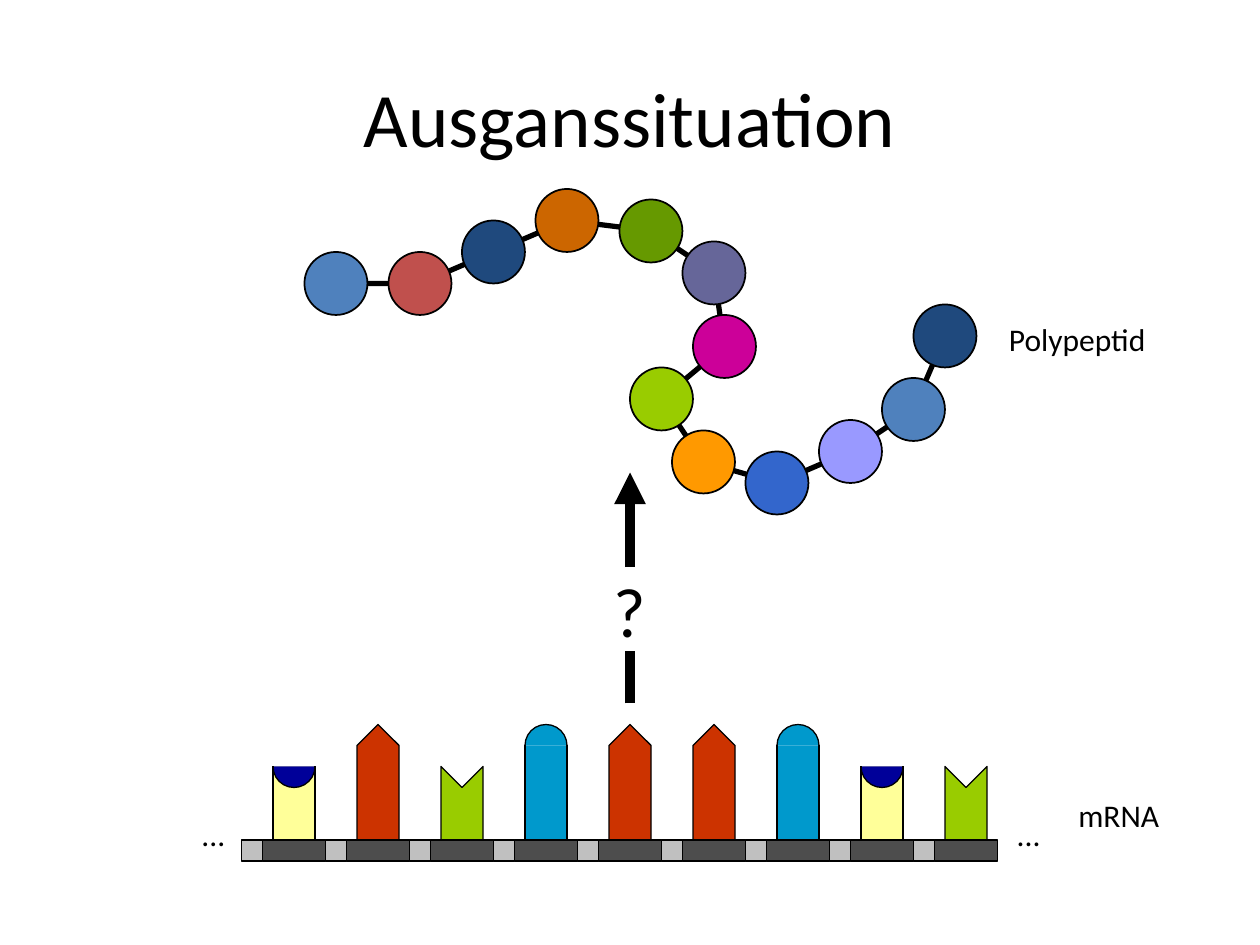
import pptx
import pptx.dml.color
import pptx.enum.shapes
import pptx.enum.text
import pptx.oxml
import pptx.oxml.ns
import pptx.util
from pptx.util import Inches

SHAPE = pptx.enum.shapes.MSO_SHAPE
STRAIGHT = pptx.enum.shapes.MSO_CONNECTOR.STRAIGHT
ALIGN = pptx.enum.text.PP_ALIGN
ANCHOR = pptx.enum.text.MSO_ANCHOR
COLORS = {
    "black": "000000", "blue": "4F81BD", "red": "C0504D", "navy": "1F497D",
    "brown": "CC6600", "green": "669900", "slate": "666699",
    "magenta": "CC0099", "lime": "99CC00", "orange": "FF9900",
    "royal": "3366CC", "lilac": "9999FF", "silver": "C0C0C0",
    "grey": "4D4D4D", "cyan": "0099CC", "yellow": "FFFF99",
    "ink": "000099", "brick": "CC3300",
}
COLORS = {name: pptx.dml.color.RGBColor.from_string(value)
          for name, value in COLORS.items()}


def at(*twelfths):
    """The drawing sits on a grid of twelfths of an inch."""
    return [Inches(n / 12) for n in twelfths]


def paint(shape, fill, width):
    shape.shadow.inherit = False
    if fill:
        shape.fill.solid()
        shape.fill.fore_color.rgb = COLORS[fill]
    else:
        shape.fill.background()
    if width:
        shape.line.color.rgb = COLORS["black"]
        shape.line.width = pptx.util.Pt(width)
    else:
        shape.line.fill.background()


deck = pptx.Presentation()
deck.slide_width, deck.slide_height = Inches(10), Inches(7.5)
slide = deck.slides.add_slide(deck.slide_layouts[6])
polypeptide, question, mrna = [
    slide.shapes.add_group_shape().shapes for _ in range(3)]

# Texts
texts = [
    (slide.shapes, "Ausganssituation", (0.5, 0.3, 9, 1.25), 44,
     {"vertical_anchor": ANCHOR.MIDDLE, "word_wrap": True}, ALIGN.CENTER),
    (question, "?", (4.75, 4.5, 0.5, 0.67), 40,
     {"vertical_anchor": ANCHOR.MIDDLE, "word_wrap": False}, ALIGN.CENTER),
    (mrna, "...", (1.5, 6.42, 0.45, 0.5), 18, {"word_wrap": False}, ALIGN.LEFT),
    (mrna, "...", (7.97, 6.42, 0.45, 0.5), 18, {"word_wrap": False}, ALIGN.LEFT),
    (slide.shapes, "mRNA", (8.46, 6.27, 1.18, 0.4), 18,
     {"word_wrap": True}, ALIGN.LEFT),
    (slide.shapes, "Polypeptid", (7.91, 2.49, 1.57, 0.4), 18,
     {"word_wrap": True}, ALIGN.LEFT),
]
for parent, wording, box, size, frame_format, align in texts:
    label = parent.add_textbox(*[Inches(n) for n in box])
    for name, value in frame_format.items():
        setattr(label.text_frame, name, value)
    paragraph = label.text_frame.paragraphs[0]
    paragraph.alignment = align
    run = paragraph.add_run()
    run.text = wording
    font_format = {"name": "Calibri", "size": pptx.util.Pt(size)}
    for name, value in font_format.items():
        setattr(run.font, name, value)
    run.font.color.rgb = COLORS["black"]
    if wording == "?":
        question_mark = label

# Polypeptide: backbone and amino acids, given by their centres
residues = [
    (32, 27, "blue"), (40, 27, "red"), (47, 24, "navy"), (54, 21, "brown"),
    (62, 22, "green"), (68, 26, "slate"), (69, 33, "magenta"),
    (63, 38, "lime"), (67, 44, "orange"), (74, 46, "royal"),
    (81, 43, "lilac"), (87, 39, "blue"), (90, 32, "navy"),
]
centres = [(x, y) for x, y, _ in residues]
backbone = polypeptide.build_freeform(*centres[0], scale=Inches(1 / 12))
backbone.add_line_segments(centres[1:], close=False)
paint(backbone.convert_to_shape(), None, 3)
for x, y, color in residues:
    residue = polypeptide.add_shape(SHAPE.OVAL, *at(x - 3, y - 3, 6, 6))
    paint(residue, color, 1)

# Arrow interrupted by the question mark
arrow = question.add_connector(STRAIGHT, *at(60, 54, 60, 45))
arrow.begin_connect(question_mark, 0)
stem = question.add_connector(STRAIGHT, *at(60, 67, 60, 62))
stem.end_connect(question_mark, 2)
connectors = [(arrow, 6), (stem, 6)]

# Bases of the mRNA: polygons, or a box with an arc on or in its top
polygons = {
    "tip": ("brick", [(0, 71), (2, 69), (4, 71), (4, 80)]),
    "notch": ("lime", [(0, 73), (2, 75), (4, 73), (4, 80)]),
}
# box colour, box top, arc colour, arc top, arc start and end (degrees * 0.6)
rounded = {
    "dome": ("cyan", 71, "cyan", 69, 108, 0),
    "cup": ("yellow", 73, "ink", 71, 0, 108),
}
sequence = ["cup", "tip", "notch", "dome", "tip", "tip", "dome", "cup", "notch"]
for i, base in enumerate(sequence):
    left = 26 + 8 * i
    if base in polygons:
        color, corners = polygons[base]
        outline = mrna.build_freeform(left, 80, scale=Inches(1 / 12))
        outline.add_line_segments([(left + x, y) for x, y in corners])
        paint(outline.convert_to_shape(), color, 0.75)
        continue
    color, top, arc_color, arc_top, start, end = rounded[base]
    body = mrna.add_shape(SHAPE.RECTANGLE, *at(left, top, 4, 80 - top))
    paint(body, color, None)
    arc = mrna.add_shape(SHAPE.ARC, *at(left, arc_top, 4, 4))
    arc.adjustments[0], arc.adjustments[1] = start, end
    paint(arc, arc_color, 0.75)
    edges = [(left, 80, left, top), (left + 4, 80, left + 4, top)]
    if base == "cup":
        edges.append((left, 80, left + 4, 80))
    for edge in edges:
        connectors.append((mrna.add_connector(STRAIGHT, *at(*edge)), 0.75))

# Strand under the bases
for i in range(len(sequence)):
    for x, width, color in [(23, 2, "silver"), (25, 6, "grey")]:
        block = mrna.add_shape(SHAPE.RECTANGLE, *at(x + 8 * i, 80, width, 2))
        paint(block, color, 1)

# Connector lines without shadow, and the arrowhead
for connector, width in connectors:
    connector.line.color.rgb = COLORS["black"]
    connector.line.width = pptx.util.Pt(width)
    properties = connector.element.spPr
    properties.append(pptx.oxml.parse_xml(
        "<a:effectLst %s/>" % pptx.oxml.ns.nsdecls("a")))
arrow.line.fill  # line properties exist at this point
arrow.element.spPr.find(pptx.oxml.ns.qn("a:ln")).append(pptx.oxml.parse_xml(
    '<a:tailEnd %s type="triangle"/>' % pptx.oxml.ns.nsdecls("a")))

deck.save("out.pptx")
